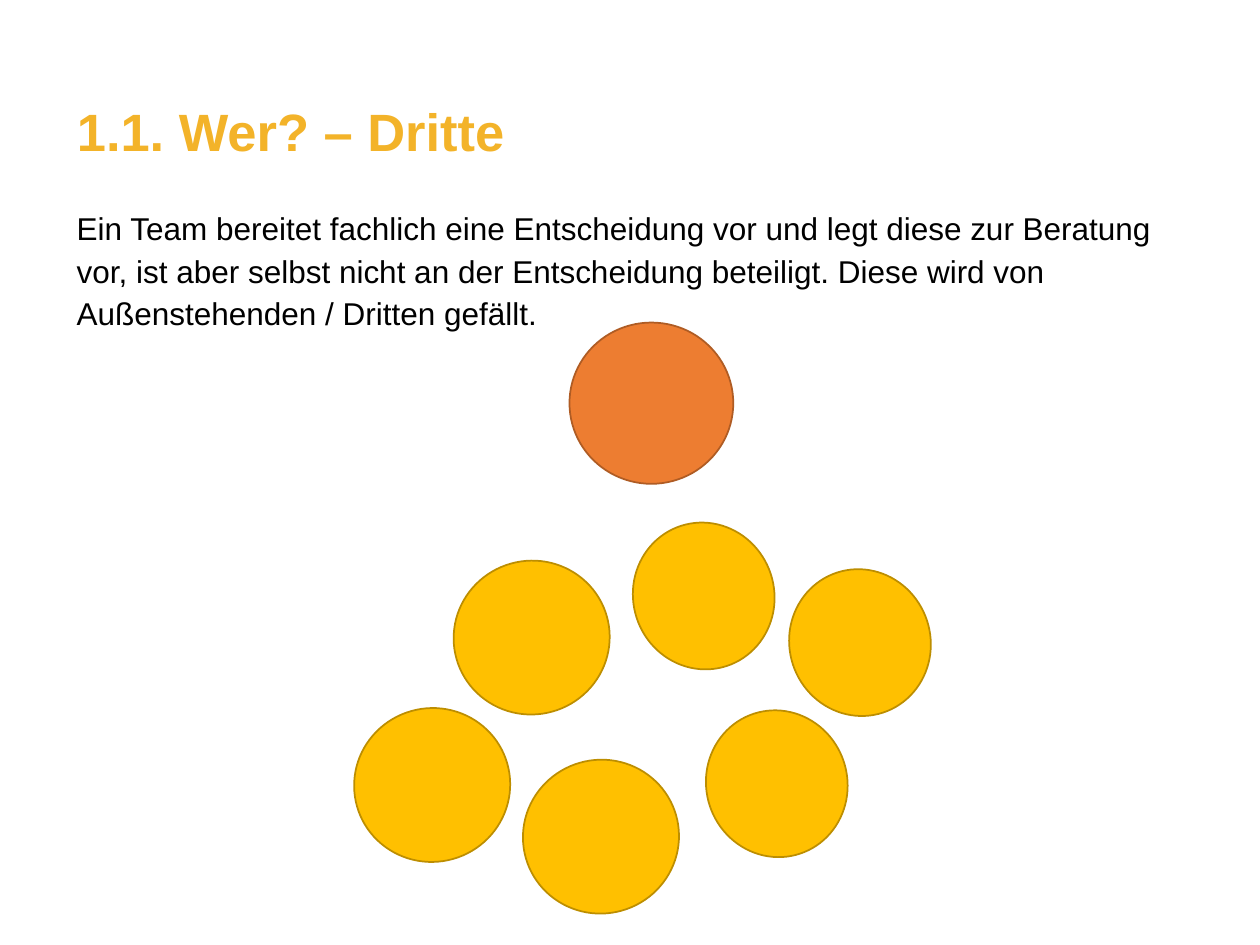
from pptx import Presentation
from pptx.dml.color import RGBColor
from pptx.enum.shapes import MSO_SHAPE
from pptx.enum.text import MSO_ANCHOR, PP_ALIGN
from pptx.util import Inches, Pt

COLORS = {
    "title": "F3B329", "text": "000000",
    "team": "FFC000", "team_line": "BD8E00",
    "third": "ED7D31", "third_line": "AF5C24",
}
TITLE = "1.1. Wer? – Dritte"
BODY = (
    "Ein Team bereitet fachlich eine Entscheidung vor und legt diese zur Beratung vor, "
    "ist aber selbst nicht an der Entscheidung beteiligt. "
    "Diese wird von Außenstehenden / Dritten gefällt."
)
CIRCLES = [
    {"color": "team", "size": (1.17, 1.12), "rotation": 71.9,
     "positions": [(6.24, 4.54), (5, 4.17), (5.58, 5.66)]},
    {"color": "team", "size": (1.22, 1.24), "rotation": 254.2,
     "positions": [(2.82, 5.61), (4.16, 6.02), (3.61, 4.44)]},
    {"color": "third", "size": (1.3, 1.28), "rotation": 0,
     "positions": [(4.52, 2.56)]},
]


def rgb(name):
    """Return the named colour."""
    return RGBColor.from_string(COLORS[name])


def write_text(shape, text, *, size, color, line_spacing, bold=False):
    """Write one left-aligned paragraph at the top of a shape."""
    frame = shape.text_frame
    frame.word_wrap = True
    frame.vertical_anchor = MSO_ANCHOR.TOP
    frame.text = text
    paragraph = frame.paragraphs[0]
    paragraph.alignment = PP_ALIGN.LEFT
    paragraph.line_spacing = line_spacing
    paragraph.space_before = Pt(0)
    font = paragraph.runs[0].font
    font.name, font.size, font.bold = "Arial", Pt(size), bold
    font.color.rgb = rgb(color)


def add_circle(shapes, position, size, rotation, color):
    """Add one person as an outlined circle."""
    circle = shapes.add_shape(MSO_SHAPE.OVAL, *map(Inches, position + size))
    circle.rotation = rotation
    circle.shadow.inherit = False
    circle.fill.solid()
    circle.fill.fore_color.rgb = rgb(color)
    circle.line.color.rgb = rgb(f"{color}_line")
    circle.line.width = Pt(1)


def main():
    """Build and save the slide."""
    presentation = Presentation()
    presentation.slide_width, presentation.slide_height = Inches(10), Inches(7.5)
    slide = presentation.slides.add_slide(presentation.slide_layouts[5])

    title = slide.shapes.title
    title.left, title.top = Inches(0.51), Inches(0.79)
    title.width, title.height = Inches(9.06), Inches(0.79)
    write_text(title, TITLE, size=30, color="title", line_spacing=0.9, bold=True)

    body = slide.shapes.add_textbox(*map(Inches, (0.51, 1.57, 9.06, 5.6)))
    write_text(body, BODY, size=18, color="text", line_spacing=Pt(24.4))

    group = slide.shapes.add_group_shape()
    for circles in CIRCLES:
        for position in circles["positions"]:
            add_circle(group.shapes, position, circles["size"],
                       circles["rotation"], circles["color"])

    presentation.save("out.pptx")


if __name__ == "__main__":
    main()
